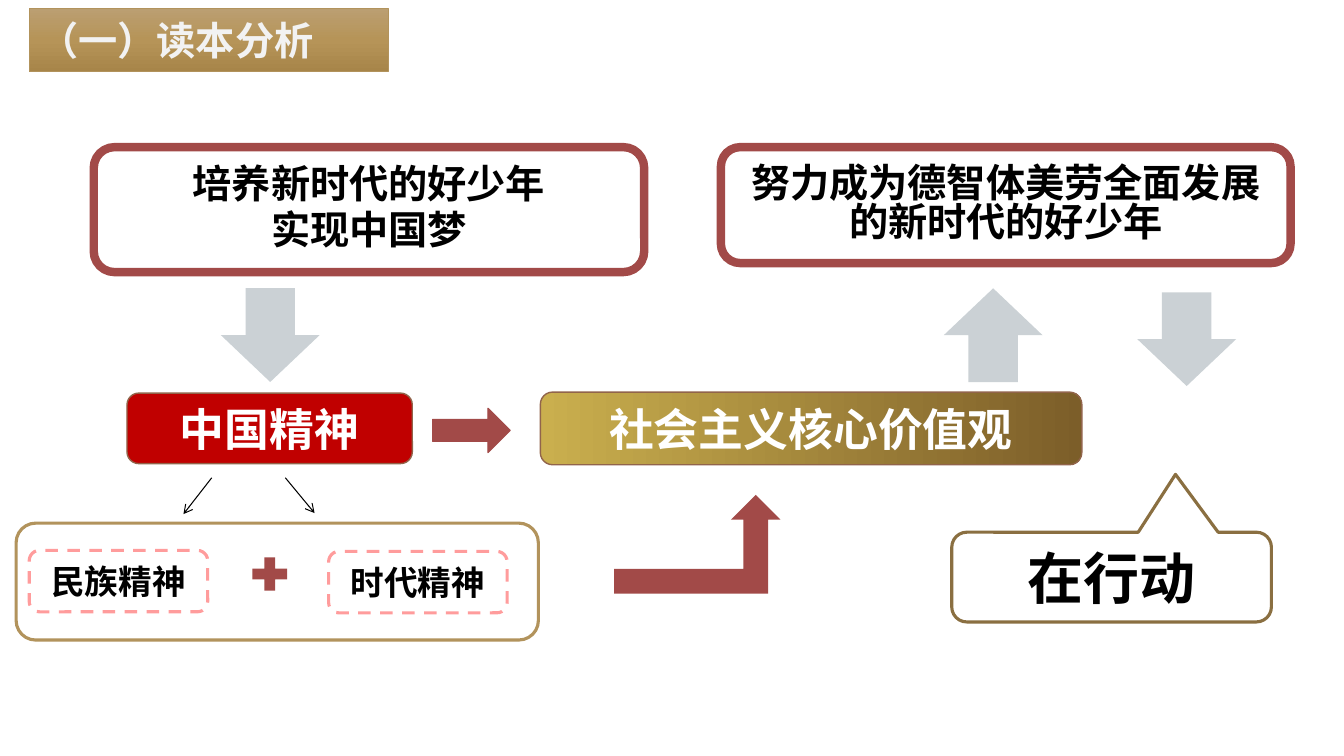
from copy import deepcopy

from lxml import etree
from pptx import Presentation
from pptx import util as u
from pptx.dml.color import RGBColor
from pptx.enum import dml, shapes, text
from pptx.oxml.ns import qn

SANS = "Noto Sans CJK SC"
BRICK = "A24A48"
GREY = "CBD1D5"
WHITE = "FFFFFF"
BLACK = "000000"
ROUND = shapes.MSO_SHAPE.ROUNDED_RECTANGLE
DOWN = shapes.MSO_SHAPE.DOWN_ARROW


def color(hex_value):
    return RGBColor.from_string(hex_value)


def paint_gradient(shape, stops, angle):
    shape.fill.gradient()
    shape.fill.gradient_angle = angle
    stop_list = shape._element.spPr.find(qn("a:gradFill")).find(qn("a:gsLst"))
    while len(stop_list) < len(stops):
        stop_list.append(deepcopy(stop_list[0]))
    for stop, (position, hex_value) in zip(shape.fill.gradient_stops, stops):
        stop.position = position
        stop.color.rgb = color(hex_value)


def paint(shape, fill=None, line=None, width=1, dash=None):
    if fill:
        shape.fill.solid()
        shape.fill.fore_color.rgb = color(fill)
    else:
        shape.fill.background()
    if line:
        shape.line.color.rgb = color(line)
        shape.line.width = u.Pt(width)
        if dash:
            shape.line.dash_style = dash
    else:
        shape.line.fill.background()


def add_shape(slide, kind, box, adjustments=(), **style):
    shape = slide.shapes.add_shape(kind, *map(u.Inches, box))
    shape.shadow.inherit = False
    for index, value in enumerate(adjustments):
        shape.adjustments[index] = value
    paint(shape, **style)
    return shape


def write(shape, content, size=28, font=SANS, fill=BLACK,
          align=text.PP_ALIGN.CENTER, before=0, after=0, spacing=None):
    frame = shape.text_frame
    frame.word_wrap = True
    frame.auto_size = text.MSO_AUTO_SIZE.NONE
    frame.vertical_anchor = text.MSO_ANCHOR.MIDDLE
    frame.text = content
    for index, paragraph in enumerate(frame.paragraphs):
        paragraph.alignment = align
        paragraph.space_before = u.Pt(before if index else 0)
        paragraph.space_after = u.Pt(after)
        if spacing:
            paragraph.line_spacing = spacing
        for run in paragraph.runs:
            run.font.size = u.Pt(size)
            run.font.bold = True
            run.font.name = font
            run.font.color.rgb = color(fill)
            east_asian = etree.SubElement(run.font._element, qn("a:ea"))
            east_asian.set("typeface", SANS)


def add_title(slide):
    title = slide.shapes.title
    title.left, title.top, title.width, title.height = map(
        u.Inches, (0.29, 0.08, 3.56, 0.63))
    geometry = etree.SubElement(title._element.spPr, qn("a:prstGeom"), prst="roundRect")
    etree.SubElement(geometry, qn("a:avLst"))
    paint(title, line="B2935C", width=0.5)
    paint_gradient(title, [(0, "BB9F72"), (0.5, "B69458"), (1, "A78549")], 270)
    write(title, "（一）读本分析", fill="F2F2F2", align=text.PP_ALIGN.LEFT)


def add_goal(slide, box, content):
    goal = add_shape(slide, ROUND, box, fill=WHITE, line=BRICK, width=6)
    write(goal, content, before=1, after=4, spacing=0.83)


def add_spirit(slide, left, top, content):
    spirit = add_shape(slide, ROUND, (left, top, 1.77, 0.61), line="FF9C9C",
                       width=2.25, dash=dml.MSO_LINE.DASH)
    write(spirit, content, size=24, font="Arial")


def add_thin_arrow(slide, start, end):
    arrow = slide.shapes.add_connector(
        shapes.MSO_CONNECTOR.STRAIGHT, *map(u.Inches, start + end))
    arrow.line.color.rgb = color(BLACK)
    arrow.line.width = u.Pt(0.75)
    etree.SubElement(arrow.line._get_or_add_ln(), qn("a:tailEnd"), type="arrow")
    etree.SubElement(arrow._element.spPr, qn("a:effectLst"))


def main():
    presentation = Presentation()
    presentation.slide_width = u.Inches(13.33)
    presentation.slide_height = u.Inches(7.5)
    slide = presentation.slides.add_slide(presentation.slide_layouts[5])

    add_title(slide)
    add_goal(slide, (0.93, 1.46, 5.46, 1.24), "培养新时代的好少年\n实现中国梦")
    add_goal(slide, (7.15, 1.46, 5.65, 1.15), "努力成为德智体美劳全面发展的新时代的好少年")

    for left, top, rotation in ((2.19, 2.86, 0), (9.36, 2.86, 180), (11.28, 2.9, 0)):
        block_arrow = add_shape(slide, DOWN, (left, top, 0.98, 0.93), fill=GREY)
        block_arrow.rotation = rotation

    chinese_spirit = add_shape(slide, ROUND, (1.26, 3.9, 2.83, 0.7),
                               fill="C00000", line="91644B")
    write(chinese_spirit, "中国精神", size=32, fill=WHITE)
    add_shape(slide, shapes.MSO_SHAPE.RIGHT_ARROW, (4.29, 4.05, 0.77, 0.44),
              fill=BRICK, line=BRICK, width=0.75)
    core_values = add_shape(slide, ROUND, (5.36, 3.89, 5.37, 0.72), line="91644B")
    paint_gradient(core_values, [(0, "CAAF4E"), (1, "7C5E29")], 0)
    write(core_values, "社会主义核心价值观", size=32, fill=WHITE)

    add_thin_arrow(slide, (2.1, 4.74), (1.82, 5.1))
    add_thin_arrow(slide, (2.83, 4.74), (3.12, 5.09))
    add_shape(slide, ROUND, (0.16, 5.19, 5.18, 1.16), line="B2935C", width=2.25)
    add_spirit(slide, 0.29, 5.46, "民族精神")
    add_shape(slide, shapes.MSO_SHAPE.MATH_PLUS, (2.44, 5.47, 0.47, 0.45), fill=BRICK)
    add_spirit(slide, 3.26, 5.47, "时代精神")

    add_shape(slide, shapes.MSO_SHAPE.BENT_UP_ARROW, (6.09, 4.91, 1.65, 0.98), fill=BRICK)
    action = add_shape(slide, shapes.MSO_SHAPE.ROUNDED_RECTANGULAR_CALLOUT,
                       (9.44, 5.28, 3.17, 0.89), (0.2, -1.145, 0.167),
                       fill=WHITE, line="8A6F41", width=2.25)
    write(action, "在行动", size=40)

    presentation.save("out.pptx")


if __name__ == "__main__":
    main()
